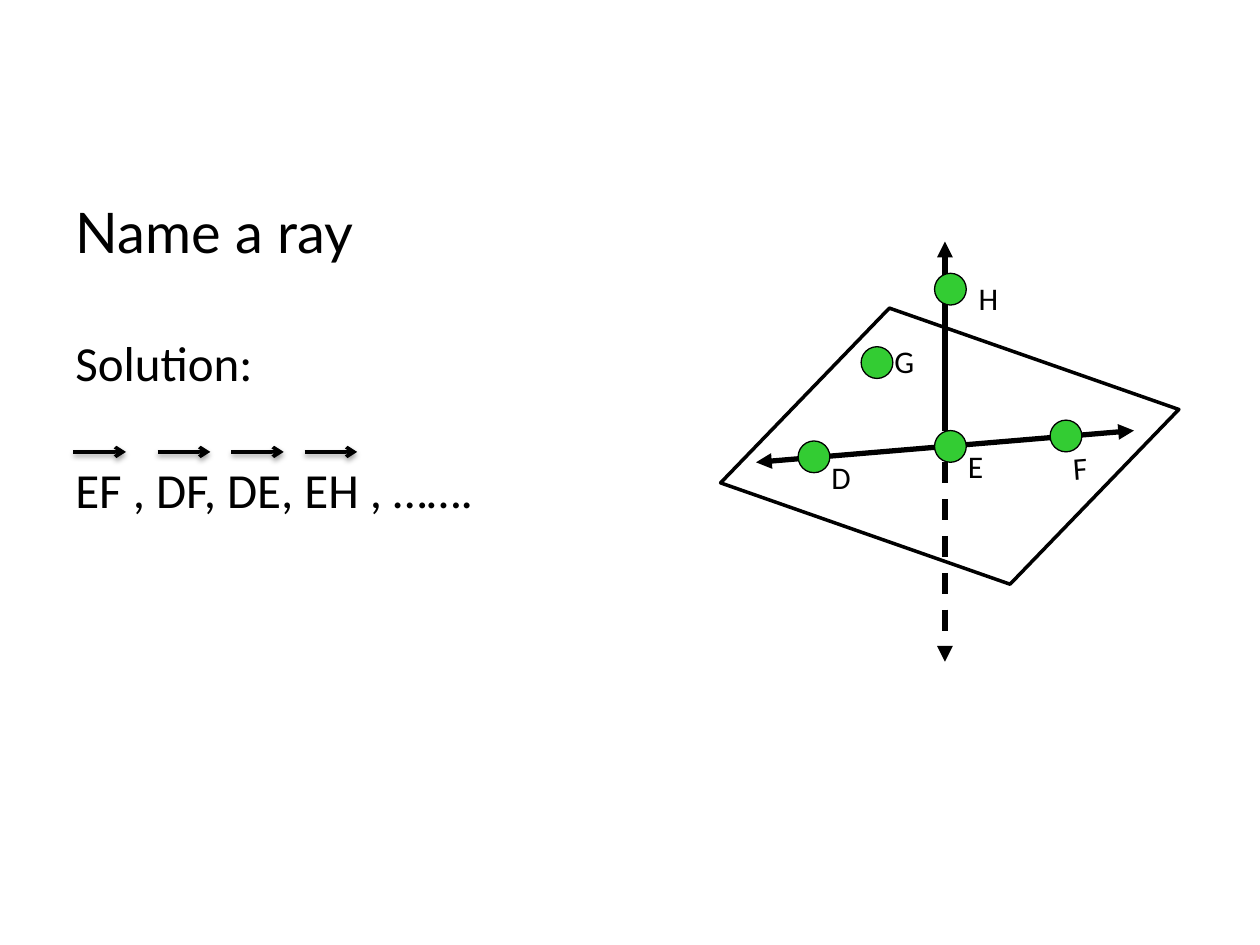
from lxml.etree import SubElement
from pptx import Presentation
from pptx.dml.color import RGBColor
from pptx.enum.dml import MSO_LINE_DASH_STYLE as Dash
from pptx.enum.shapes import MSO_CONNECTOR as Connector, MSO_SHAPE as Shape
from pptx.oxml.ns import qn
from pptx.util import Cm, Pt

COLORS = {"ink": "000000", "plane": "FFFFFF", "point": "33CC33"}


def color(name):
    return RGBColor.from_string(COLORS[name])


def format_font(paragraph, **values):
    for name, value in values.items():
        setattr(paragraph.font, name, value)
    paragraph.font.color.rgb = color("ink")


def add_text_box(slide, left, top, width, height):
    box = slide.shapes.add_textbox(Cm(left), Cm(top), Cm(width), Cm(height))
    box.text_frame.word_wrap = True
    return box


def add_solid(slide, kind, left, top, width, height, fill, weight):
    shape = slide.shapes.add_shape(kind, Cm(left), Cm(top), Cm(width), Cm(height))
    shape.shadow.inherit = False
    shape.fill.solid()
    shape.fill.fore_color.rgb = color(fill)
    shape.line.color.rgb = color("ink")
    shape.line.width = Pt(weight)
    return shape


def add_arrow(slide, start, end, weight, head=None, tail="triangle",
              dash=None, shadow=False):
    arrow = slide.shapes.add_connector(
        Connector.STRAIGHT, *(Cm(value) for value in (*start, *end)))
    arrow.line.color.rgb = color("ink")
    arrow.line.width = Pt(weight)
    if dash:
        arrow.line.dash_style = dash
    line = arrow.line._get_or_add_ln()
    for tag, kind in (("a:headEnd", head), ("a:tailEnd", tail)):
        if kind:
            SubElement(line, qn(tag), type=kind)
    # An empty effect list removes the theme's shadow
    effects = SubElement(arrow._element.spPr, qn("a:effectLst"))
    if shadow:
        outer = SubElement(effects, qn("a:outerShdw"), blurRad=str(Pt(3.1)),
                           dist=str(Pt(1.6)), dir="5400000", rotWithShape="0")
        ink = SubElement(outer, qn("a:srgbClr"), val=COLORS["ink"])
        SubElement(ink, qn("a:alpha"), val="38000")


def add_answer(slide, left, top, width, height):
    # Question and solution
    frame = add_text_box(slide, left, top, width, height).text_frame
    frame.margin_top = Cm(3.5)
    lines = [("Name a ray", "Lato", 32, 0), ("Solution:", "Calibri", 28, 42),
             ("EF , DF, DE, EH , …….", "Calibri", 28, 42)]
    for index, (text, font, size, gap) in enumerate(lines):
        paragraph = frame.add_paragraph() if index else frame.paragraphs[0]
        paragraph.text = text
        paragraph.line_spacing = 0.9
        paragraph.space_before = Pt(gap)
        format_font(paragraph, name=font, size=Pt(size))

    # Ray marks above the letter pairs
    y = top + 8.47
    for offset in (0.21, 1.91, 3.39, 4.87):
        x = left + offset
        add_arrow(slide, (x, y), (x + 1.06, y), 2, tail="arrow", shadow=True)


def add_diagram(slide, left, top):
    def place(x, y):
        return left + x, top + y

    # Plane
    plane = add_solid(slide, Shape.PARALLELOGRAM, *place(0, 1.9), 8.23, 4.45,
                      "plane", 2)
    plane.adjustments[0] = 0.46
    plane.rotation = 19.3

    # Line in the plane, and the line that crosses it
    add_arrow(slide, place(0.21, 4.45), place(7.83, 3.81), 3, head="triangle")
    add_arrow(slide, place(4.02, 3.81), place(4.02, 0), 3)
    add_arrow(slide, place(4.02, 4.45), place(4.02, 8.47), 3, dash=Dash.DASH)

    # Points with their letters: point corner, label corner, label rotation
    points = {
        "G": ((2.33, 2.12), (2.75, 1.9), 0),
        "D": ((1.06, 4.02), (1.48, 4.23), 0),
        "E": ((3.81, 3.81), (4.23, 4.02), 0),
        "F": ((6.14, 3.6), (6.35, 4.02), 355.6),
        "H": ((3.81, 0.64), (4.45, 0.64), 0),
    }
    for letter, (corner, label_corner, rotation) in points.items():
        add_solid(slide, Shape.OVAL, *place(*corner), 0.64, 0.64, "point", 0.75)
        label = add_text_box(slide, *place(*label_corner), 1.48, 1.02)
        label.rotation = rotation
        paragraph = label.text_frame.paragraphs[0]
        paragraph.text = letter
        format_font(paragraph, name="Calibri", size=Pt(18))


def main():
    presentation = Presentation()
    presentation.slide_width, presentation.slide_height = Cm(25.4), Cm(19.05)
    slide = presentation.slides.add_slide(presentation.slide_layouts[6])
    add_answer(slide, 1.27, 0.64, 13.97, 17.78)
    add_diagram(slide, 15.03, 4.87)
    presentation.save("out.pptx")


if __name__ == "__main__":
    main()
